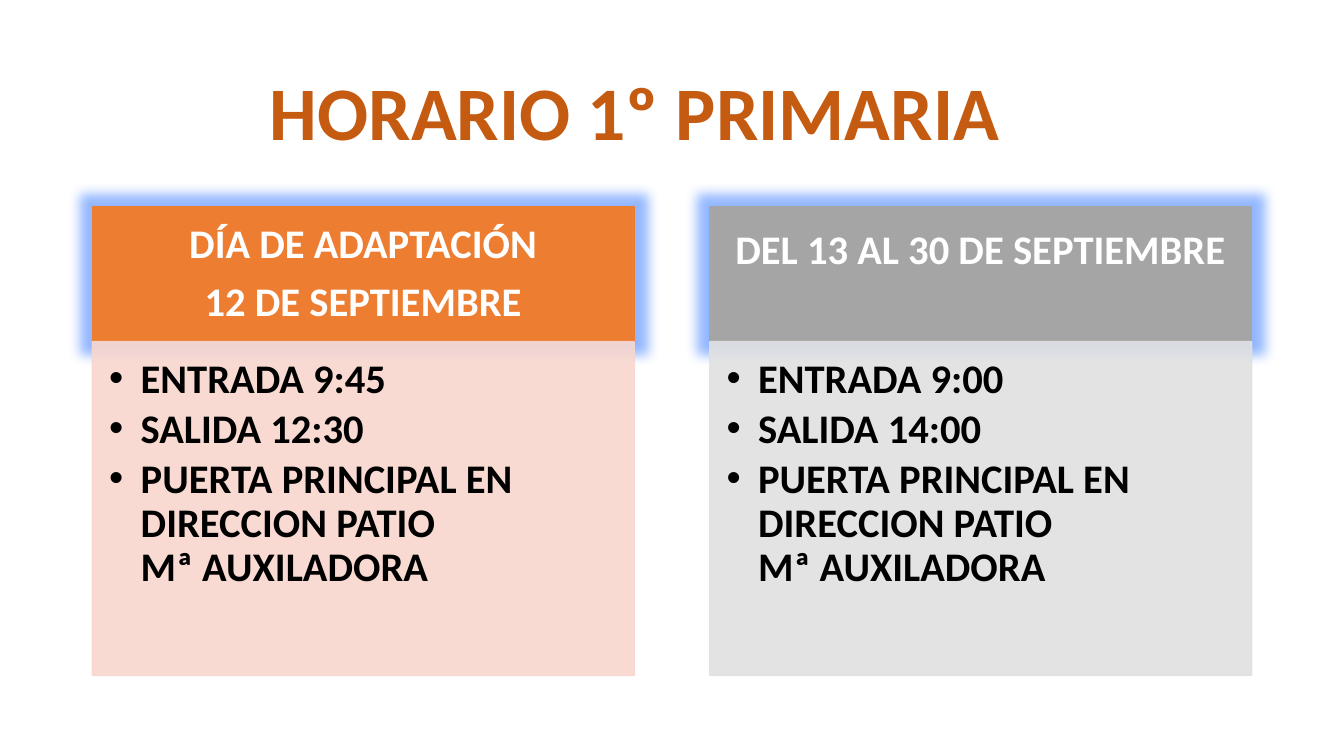
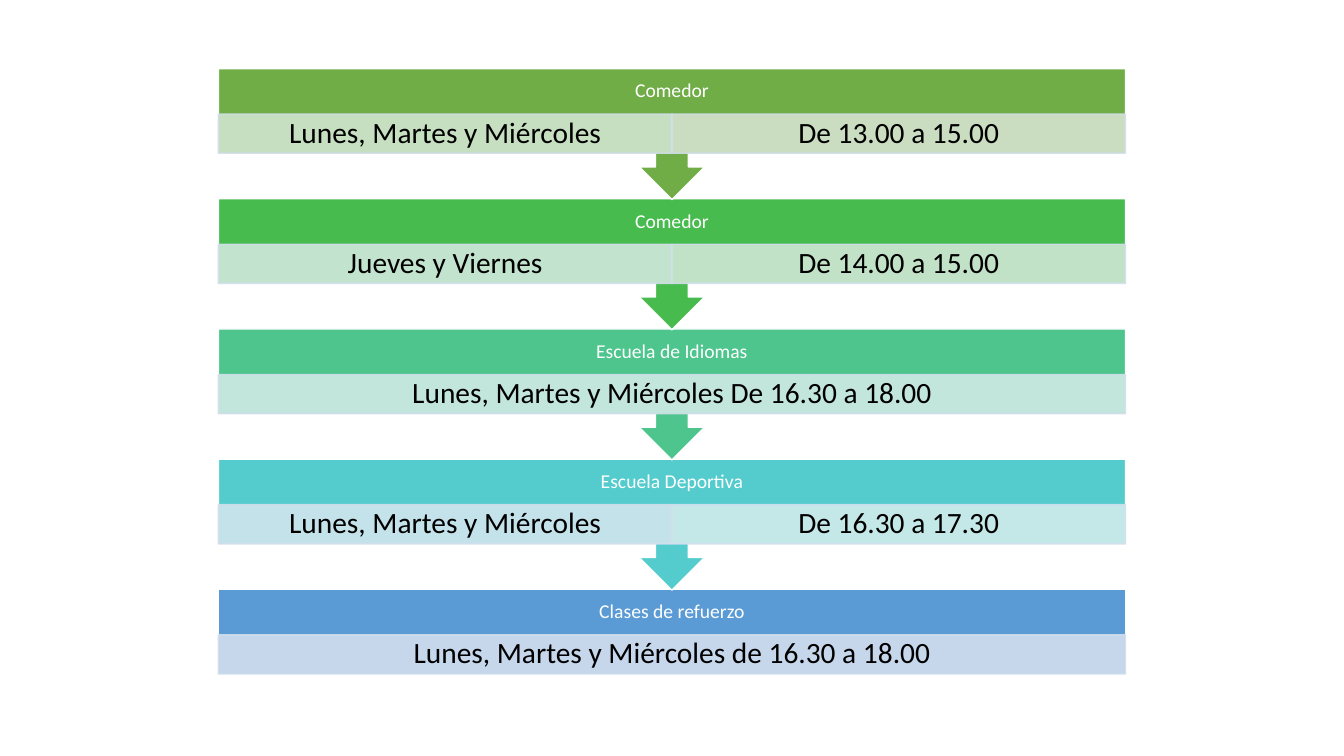
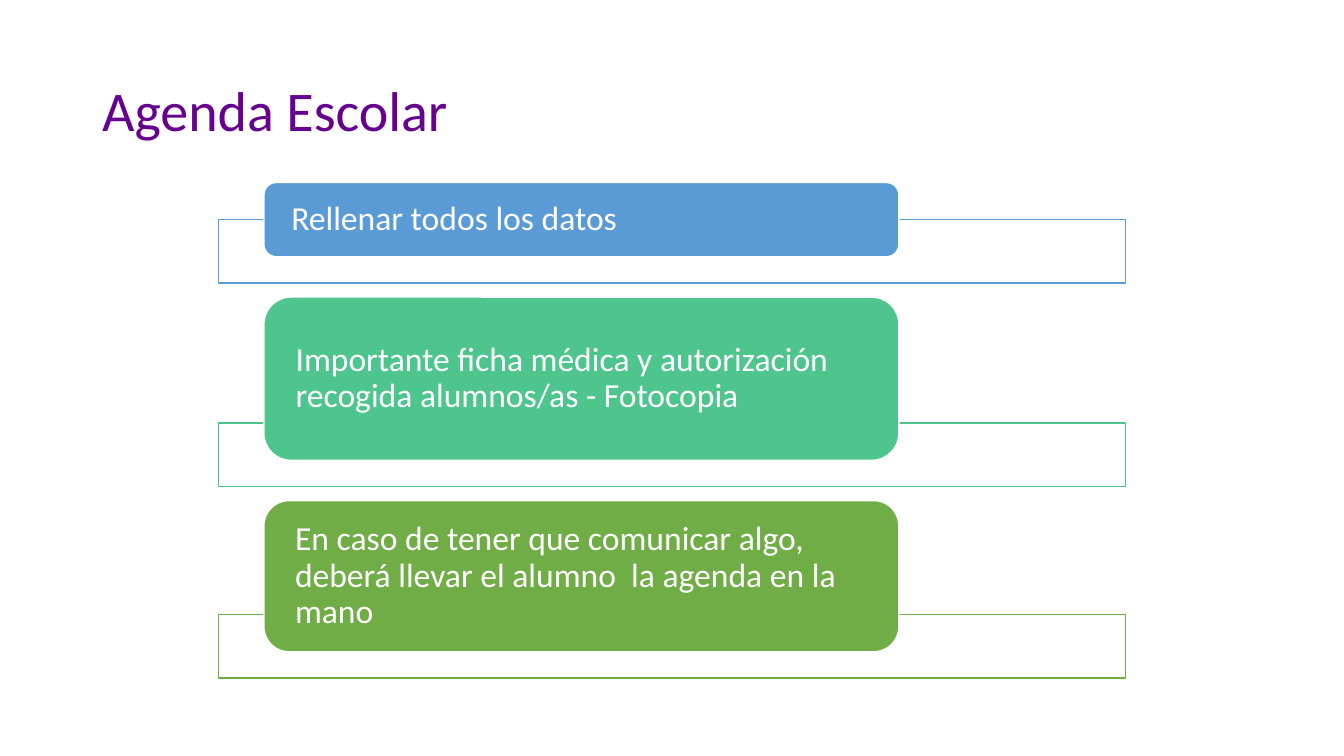
"""Build three school slides: first-grade hours, weekly services and diary rules."""
import dataclasses

import lxml.etree
import pptx
import pptx.dml.color
import pptx.enum.shapes
import pptx.enum.text
import pptx.oxml.ns
import pptx.util

Pt = pptx.util.Pt
Kind = pptx.enum.shapes.MSO_SHAPE
Side = pptx.enum.text.PP_ALIGN
Hold = pptx.enum.text.MSO_ANCHOR
Fit = pptx.enum.text.MSO_AUTO_SIZE
qn = pptx.oxml.ns.qn


@dataclasses.dataclass(frozen=True)
class Theme:
    """Hold the colours and type sizes of the deck."""
    face: str = "Calibri"
    white: str = "FFFFFF"
    black: str = "000000"
    rust: str = "C55A11"
    plum: str = "66008F"
    orange: str = "ED7D31"
    peach: str = "F8D7CE"
    grey: str = "A5A5A5"
    pale: str = "E1E1E1"
    halo: str = "1161FF"
    blue: str = "5B9BD5"
    aqua: str = "54CCCD"
    mint: str = "4DC58D"
    green: str = "48BB4F"
    olive: str = "70AD47"
    rim: str = "D2DEEF"
    banner: int = 54
    head: int = 40
    card: int = 29
    chip: int = 24
    cell: int = 21
    label: int = 14


T = Theme()


def apply(obj, vals):
    """Set each named value on an object."""
    for name, val in vals.items():
        setattr(obj, name, val)


def tone(code):
    """Turn a hex code into a colour."""
    return pptx.dml.color.RGBColor.from_string(code)


def place(box, at):
    """Move a box to left, top, width and height in points."""
    apply(box, dict(zip(("left", "top", "width", "height"), map(Pt, at))))


def fade(node, share):
    """Add an opacity in percent to a colour node."""
    lxml.etree.SubElement(node, qn("a:alpha"), val=str(share * 1000))


def paint(box, fill, edge, clear=False):
    """Fill and outline a box, at 90 percent opacity when clear."""
    box.shadow.inherit = False
    box.fill.solid()
    box.fill.fore_color.rgb = tone(fill)
    box.line.color.rgb = tone(edge)
    box.line.width = Pt(1)
    if clear:
        for node in box.element.spPr.iter(qn("a:srgbClr")):
            fade(node, 90)


def glow(box, size):
    """Put a soft halo around a box."""
    rim = box.element.spPr.find(qn("a:effectLst"))
    halo = lxml.etree.SubElement(rim, qn("a:glow"), rad=str(Pt(size)))
    fade(lxml.etree.SubElement(halo, qn("a:srgbClr"), val=T.halo), 45)


def write(box, lines, size, ink, pad, bold=False, side=Side.CENTER,
          hold=Hold.MIDDLE, gap=0, lead=0.9):
    """Write paragraphs in a box, padded left, top, right and bottom."""
    frame = box.text_frame
    apply(frame, {"word_wrap": True, "auto_size": Fit.NONE, "vertical_anchor": hold})
    names = ("margin_left", "margin_top", "margin_right", "margin_bottom")
    apply(frame, dict(zip(names, map(Pt, pad))))
    frame.text = "\n".join(lines)
    for para in frame.paragraphs:
        apply(para, {"alignment": side, "line_spacing": lead,
                     "space_before": Pt(0), "space_after": Pt(gap)})
        for run in para.runs:
            apply(run.font, {"name": T.face, "size": Pt(size), "bold": bold})
            run.font.color.rgb = tone(ink)


def card(head, body, at, look, text):
    """Place a glowing header above its bullet list."""
    left, top, wide, high = at
    fill, tint = look
    lines, items, lift = text
    split = 96.5
    place(head, (left, top, wide, split))
    paint(head, fill, fill)
    glow(head, 18)
    write(head, lines, T.card, T.white, (16, 9, 16, 9 + lift), True, gap=10)
    place(body, (left, top + split, wide, high - split))
    paint(body, tint, tint, True)
    write(body, items, T.card, T.black, (12, 12, 16, 18), True,
          Side.LEFT, Hold.TOP, 4.35)
    for para in body.text_frame.paragraphs:
        apply_list = para._p.get_or_add_pPr()
        apply_list.set("marL", str(Pt(22.5)))
        apply_list.set("indent", str(Pt(-22.5)))


def hours(deck):
    """Build the slide of first-grade hours."""
    slide = deck.slides.add_slide(deck.slide_layouts[4])
    title, *parts = slide.placeholders
    place(title, (183, 42.5, 541, 72.5))
    write(title, ["HORARIO 1º PRIMARIA"], T.banner, T.rust, (7, 4, 7, 4), True, lead=1)
    door = "PUERTA PRINCIPAL EN DIRECCION PATIO\vMª AUXILADORA"
    cards = [
        ((T.orange, T.peach), (["DÍA DE ADAPTACIÓN", "12 DE SEPTIEMBRE"],
                               ["ENTRADA 9:45", "SALIDA 12:30", door], 0)),
        ((T.grey, T.pale), (["DEL 13 AL 30 DE SEPTIEMBRE"],
                            ["ENTRADA 9:00", "SALIDA 14:00", door], 32)),
    ]
    for num, (look, text) in enumerate(cards):
        head, body = parts[2 * num:2 * num + 2]
        card(head, body, (66 + 441 * num, 147.5, 387, 335), look, text)


def step(slide, at, kind, fill, name, cells):
    """Place one labelled band with its row of cells."""
    left, top, wide, high = at
    band = slide.shapes.add_shape(kind, *map(Pt, at))
    paint(band, fill, T.white)
    write(band, [name], T.label, T.white, (8, 8, 8, 36))
    part = wide / len(cells)
    for num, (text, tint) in enumerate(cells):
        spot = (left + num * part, top + 32.5, part, 28)
        cell = slide.shapes.add_shape(Kind.RECTANGLE, *map(Pt, spot))
        paint(cell, tint, T.rim, True)
        cell.line.color.rgb = tone(T.rim)
        write(cell, [text], T.cell, T.black, (11.5, 2, 11.5, 2))


def week(deck):
    """Build the slide of weekly services, from the last band up."""
    slide = deck.slides.add_slide(deck.slide_layouts[6])
    days = "Lunes, Martes y Miércoles"
    steps = [
        (T.olive, "Comedor", [(days, "D0E5CF"), ("De 13.00 a 15.00", "D5E3CF")]),
        (T.green, "Comedor", [("Jueves y Viernes", "D0E9DD"),
                              ("De 14.00 a 15.00", "D0E7D5")]),
        (T.mint, "Escuela de Idiomas", [(days + " De 16.30 a 18.00", "D0EAE5")]),
        (T.aqua, "Escuela Deportiva", [(days, "D1E5EE"),
                                       ("De 16.30 a 17.30", "D1EBEC")]),
        (T.blue, "Clases de refuerzo", [(days + " de 16.30 a 18.00", T.rim)]),
    ]
    last = len(steps) - 1
    for num in range(last, -1, -1):
        kind, high = ((Kind.RECTANGLE, 61) if num == last
                      else (Kind.DOWN_ARROW_CALLOUT, 93.6))
        step(slide, (156, 49 + 93 * num, 648, high), kind, *steps[num])


def rule(slide, at, fill, text):
    """Place a rounded note over its open frame and return the frame's end."""
    left, top, wide, high = at
    base = top + high - 26.6
    frame = slide.shapes.add_shape(
        Kind.RECTANGLE, *map(Pt, (left, base, wide, 45.4)))
    paint(frame, T.white, fill)
    note = slide.shapes.add_shape(
        Kind.ROUNDED_RECTANGLE, *map(Pt, (left + 32.5, top, wide * 0.7, high)))
    paint(note, fill, T.white)
    write(note, [text], T.chip, T.white, (17, 0, 17, 0), side=Side.LEFT)
    return base + 45.4


def diary(deck):
    """Build the slide of diary rules."""
    slide = deck.slides.add_slide(deck.slide_layouts[5])
    title = slide.shapes.title
    place(title, (66, 29, 828, 104))
    write(title, ["Agenda Escolar"], T.head, T.plum, (7, 4, 7, 4), side=Side.LEFT)
    rules = [
        (53, T.blue, "Rellenar todos los datos"),
        (116.6, T.mint, "Importante ficha médica y autorización recogida "
                        "alumnos/as - Fotocopia"),
        (108, T.olive, "En caso de tener que comunicar algo, deberá llevar "
                       "el alumno  la agenda en la mano"),
    ]
    top = 130.4
    for high, fill, text in rules:
        top = rule(slide, (156, top, 648, high), fill, text) + 10


def main():
    """Build and save the deck."""
    deck = pptx.Presentation()
    apply(deck, {"slide_width": Pt(960), "slide_height": Pt(540)})
    for build in (hours, week, diary):
        build(deck)
    deck.save("out.pptx")


if __name__ == "__main__":
    main()
